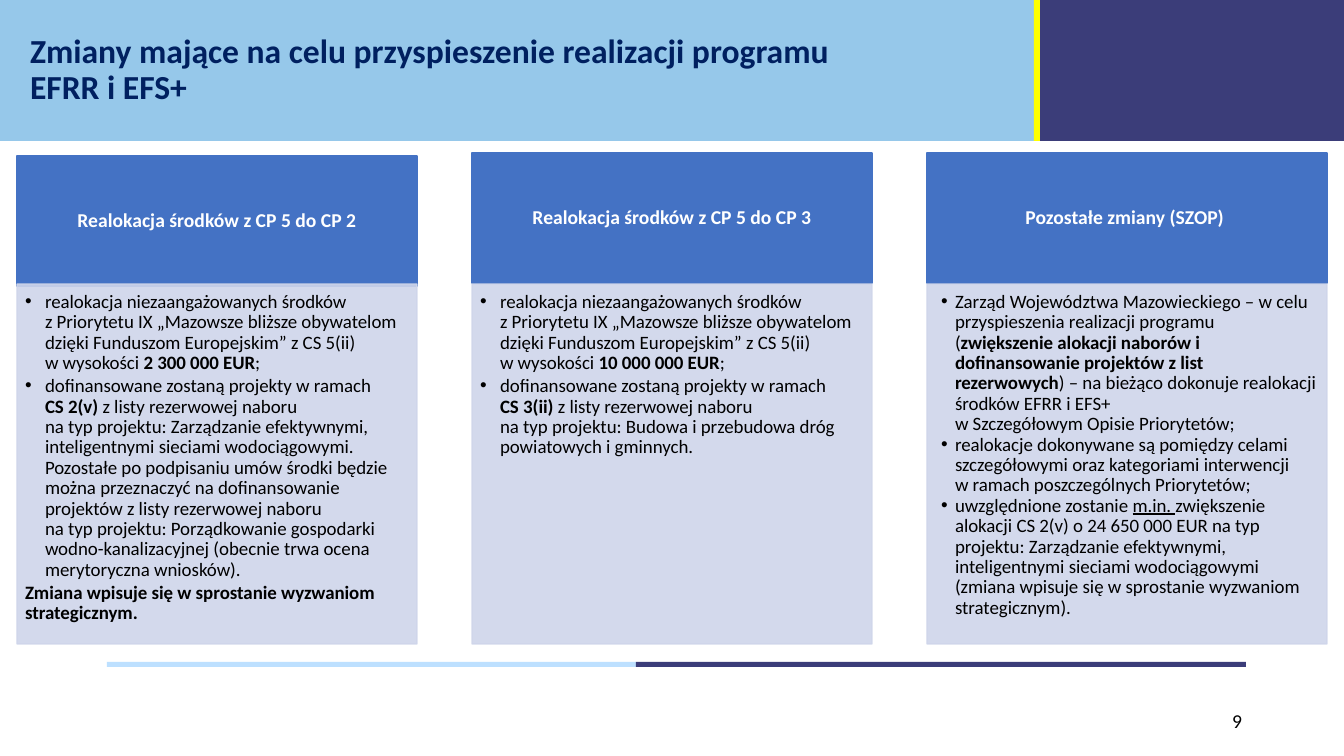
from lxml.etree import SubElement
from pptx import Presentation
from pptx.dml.color import RGBColor
from pptx.enum.shapes import MSO_SHAPE as Preset
from pptx.enum.text import MSO_ANCHOR as Anchor, PP_ALIGN as Align
from pptx.oxml.ns import qn
from pptx.util import Pt

SCALE = 12192000 / 1344
FONT = "Calibri"
COLORS = {
    "sky": "96C8EA", "navy": "3B3D79", "yellow": "FFFF00", "pale": "BDE0FF",
    "title": "002060", "header": "4472C4", "body": "CFD5EA",
    "white": "FFFFFF", "black": "000000",
}


def px(length):
    return round(length * SCALE)


def color(name):
    return RGBColor.from_string(COLORS[name])


def add_bar(page, box, fill, outlined=False, opacity=100):
    bar = page.shapes.add_shape(Preset.RECTANGLE, *map(px, box))
    bar.shadow.inherit = False
    bar.fill.solid()
    bar.fill.fore_color.rgb = color(fill)
    if outlined:
        bar.line.color.rgb = color(fill)
        bar.line.width = Pt(1)
    else:
        bar.line.fill.background()
    if opacity < 100:
        for tone in bar._element.spPr.iter(qn("a:srgbClr")):
            SubElement(tone, qn("a:alpha"), val=str(opacity * 1000))
    return bar


def add_bullet(para, hang):
    props = para._p.get_or_add_pPr()
    props.set("marL", str(px(20)))
    props.set("indent", str(-px(hang)))
    SubElement(props, qn("a:buFont"), typeface="Arial")
    SubElement(props, qn("a:buChar"), char="•")


def write(shape, paragraphs, size, tone="black", bold=False, align=Align.LEFT,
          anchor=Anchor.MIDDLE, insets=(10, 5, 10, 5), spacing=0.9, after=0, hang=0):
    frame = shape.text_frame
    frame.word_wrap = True
    frame.vertical_anchor = anchor
    (frame.margin_left, frame.margin_top,
     frame.margin_right, frame.margin_bottom) = map(px, insets)
    for index, (bulleted, spans) in enumerate(paragraphs):
        para = frame.add_paragraph() if index else frame.paragraphs[0]
        if bulleted:
            add_bullet(para, hang)
        para.alignment = align
        para.line_spacing = spacing
        para.space_after = Pt(after)
        for text, style in spans:
            for number, line in enumerate(text.split("\n")):
                if number:
                    para.add_line_break()
                if not line:
                    continue
                span = para.add_run()
                span.text = line
                font = span.font
                font.name, font.size = FONT, Pt(size)
                font.bold = bold or style == "bold"
                font.underline = style == "underline"
                font.color.rgb = color(tone)


def plain(*lines):
    return [(False, [(line, "")]) for line in lines]


def reallocation(amount, goal, projects):
    return [
        (True, [
            ("realokacja niezaangażowanych środków \nz Priorytetu IX „Mazowsze bliższe "
             "obywatelom dzięki Funduszom Europejskim” z CS 5(ii) \nw wysokości ", ""),
            (amount, "bold"), (";", ""),
        ]),
        (True, [
            ("dofinansowane zostaną projekty w ramach \n", ""), (goal + " ", "bold"),
            ("z listy rezerwowej naboru \nna typ projektu: " + projects, ""),
        ]),
    ]


WATER = reallocation(
    "2 300 000 EUR", "CS 2(v)",
    "Zarządzanie efektywnymi, inteligentnymi sieciami wodociągowymi. Pozostałe po "
    "podpisaniu umów środki będzie można przeznaczyć na dofinansowanie projektów "
    "z listy rezerwowej naboru \nna typ projektu: Porządkowanie gospodarki "
    "wodno-kanalizacyjnej (obecnie trwa ocena merytoryczna wniosków).",
) + [(False, [("Zmiana wpisuje się w sprostanie wyzwaniom strategicznym.", "bold")])]

ROADS = reallocation(
    "10 000 000 EUR", "CS 3(ii)",
    "Budowa i przebudowa dróg powiatowych i gminnych.")

OTHER = [
    (True, [
        ("Zarząd Województwa Mazowieckiego – w celu przyspieszenia realizacji programu (", ""),
        ("zwiększenie alokacji naborów i dofinansowanie projektów z list rezerwowych", "bold"),
        (") – na bieżąco dokonuje realokacji środków EFRR i EFS+ \n"
         "w Szczegółowym Opisie Priorytetów;", ""),
    ]),
    (True, [
        ("realokacje dokonywane są pomiędzy celami szczegółowymi oraz kategoriami "
         "interwencji \nw ramach poszczególnych Priorytetów;", ""),
    ]),
    (True, [
        ("uwzględnione zostanie ", ""), ("m.in. ", "underline"),
        ("zwiększenie alokacji CS 2(v) o 24 650 000 EUR na typ projektu: Zarządzanie "
         "efektywnymi, inteligentnymi sieciami wodociągowymi (zmiana wpisuje się "
         "w sprostanie wyzwaniom strategicznym).", ""),
    ]),
]

COLUMNS = [
    ("Realokacja środków z CP 5 do CP 2", WATER, 3, 20, 2),
    ("Realokacja środków z CP 5 do CP 3", ROADS, 0, 20, 2),
    ("Pozostałe zmiany (SZOP) ", OTHER, 0, 14, 0),
]


def draw_banner(page, box):
    left, top, width, height = box
    split = left + width - 304
    add_bar(page, box, "sky")
    add_bar(page, (split, top, 304, height), "navy")
    title = page.shapes.add_textbox(*map(px, (left + 20, top, 1012, height)))
    write(title, plain("Zmiany mające na celu przyspieszenie realizacji programu",
                       "EFRR i EFS+"), 24, tone="title", bold=True)
    add_bar(page, (split - 6, top, 6, height), "yellow")


def draw_column(page, box, heading, paragraphs, drop, hang, after):
    left, top, width, height = box
    header = add_bar(page, (left, top + drop, width, 130), "header", outlined=True)
    write(header, plain(heading), 14, tone="white", bold=True, align=Align.CENTER,
          insets=(11, 6, 11, 6))
    body = add_bar(page, (left, top + 131, width, height - 131), "body",
                   outlined=True, opacity=90)
    write(body, paragraphs, 13.5, anchor=Anchor.TOP, insets=(8, 8, 11, 12),
          after=after, hang=hang)


def draw_footer(page, box):
    left, top, width, height = box
    pale_width = 529
    add_bar(page, (left, top, pale_width, 5), "pale")
    add_bar(page, (left + pale_width, top, width - pale_width, 5), "navy")
    number = page.shapes.add_textbox(
        *map(px, (left + width + 6 - 302, top + height - 40, 302, 40)))
    write(number, plain("9"), 14, align=Align.RIGHT, spacing=1.0)


def main():
    deck = Presentation()
    deck.slide_width, deck.slide_height = px(1344), px(756)
    page = deck.slides.add_slide(deck.slide_layouts[6])
    draw_banner(page, (0, 0, 1344, 141))
    draw_footer(page, (107, 662, 1139, 79))
    for index, column in enumerate(COLUMNS):
        draw_column(page, (17 + 455 * index, 153, 400, 491), *column)
    deck.save("out.pptx")


if __name__ == "__main__":
    main()
